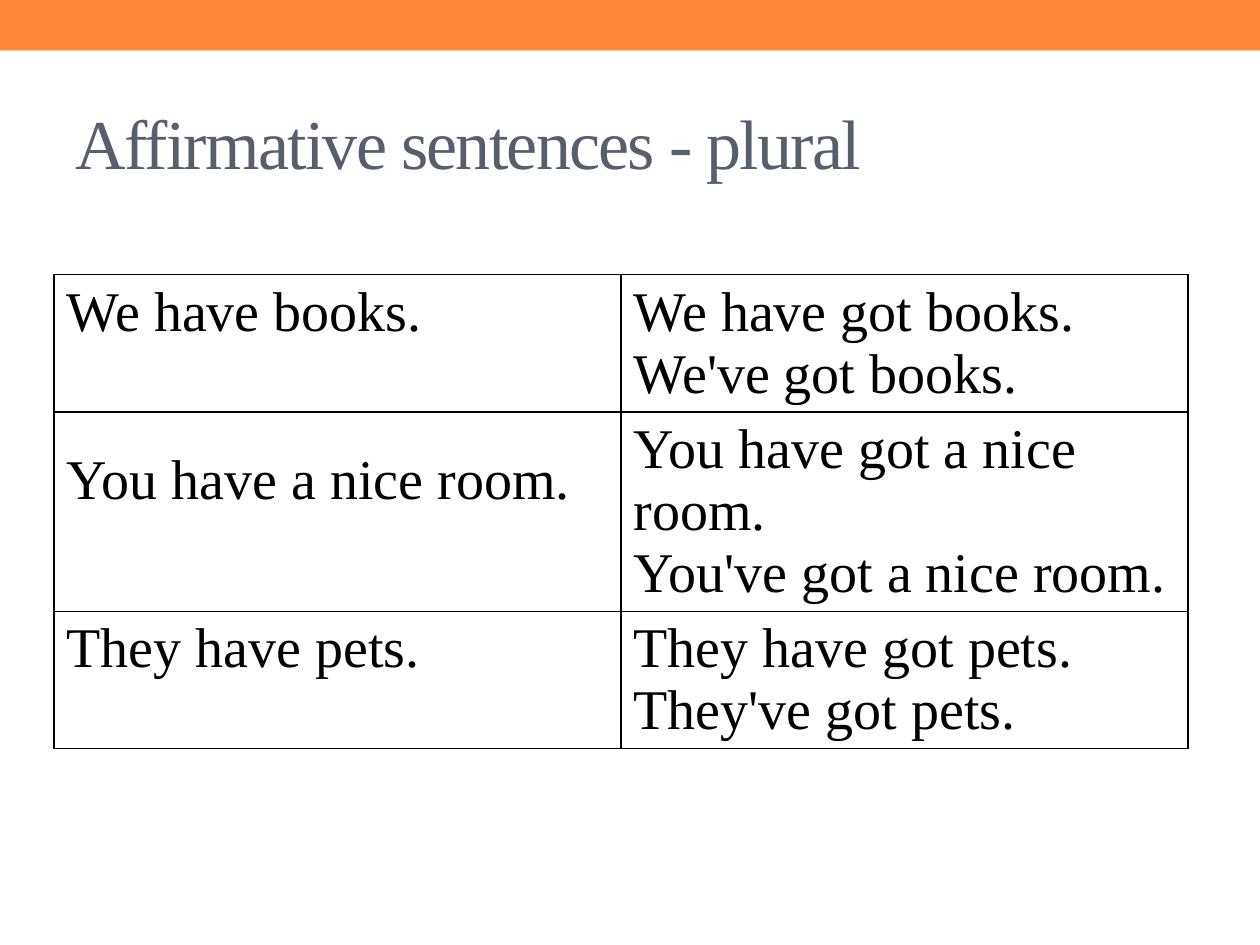
from pptx import Presentation
from pptx.dml.color import RGBColor
from pptx.enum.shapes import MSO_SHAPE as Shape
from pptx.enum.text import MSO_ANCHOR as Anchor, PP_ALIGN as Align
from pptx.oxml import parse_xml
from pptx.oxml.ns import nsdecls
from pptx.util import Inches, Pt

ORANGE = RGBColor(0xFE, 0x86, 0x37)
SLATE = RGBColor(0x57, 0x5F, 0x6D)
BLACK = RGBColor(0x00, 0x00, 0x00)

SENTENCES = [
    ("We have books.", "We have got books.\vWe've got books."),
    ("You have a nice room.", "You have got a nice room.\vYou've got a nice room."),
    ("They have pets.", "They have got pets.\vThey've got pets."),
]
ROW_HEIGHTS = [1.09, 1.58, 1.09]
TEXT_LINE = 0.49
CELL_MARGIN = 0.05


class SlideBuilder:
    font_name = "Times New Roman"

    def __init__(self, page):
        self.page = page

    def style(self, para, size, color):
        para.alignment = Align.LEFT
        para.font.name = self.font_name
        para.font.size = Pt(size)
        para.font.color.rgb = color

    def band(self, left, top, width, height, color):
        band = self.page.shapes.add_shape(
            Shape.RECTANGLE, Inches(left), Inches(top), Inches(width), Inches(height))
        band.shadow.inherit = False
        band.fill.solid()
        band.fill.fore_color.rgb = color
        band.line.fill.background()

    def title(self, text, left, top, width, height):
        title = self.page.shapes.title
        title.left, title.top = Inches(left), Inches(top)
        title.width, title.height = Inches(width), Inches(height)
        title.text_frame.vertical_anchor = Anchor.MIDDLE
        para = title.text_frame.paragraphs[0]
        span = para.add_run()
        span.text = text
        span._r.get_or_add_rPr().set("spc", "-100")
        self.style(para, 40, SLATE)

    def borders(self, cell, color, width):
        properties = cell._tc.get_or_add_tcPr()
        for side in ("lnL", "lnR", "lnT", "lnB"):
            properties.append(parse_xml(
                f'<a:{side} {nsdecls("a")} w="{Pt(width)}"><a:solidFill>'
                f'<a:srgbClr val="{color}"/></a:solidFill></a:{side}>'))

    def table(self, rows, row_heights, left, top, width):
        frame = self.page.shapes.add_table(
            len(rows), len(rows[0]), Inches(left), Inches(top),
            Inches(width), Inches(sum(row_heights)))
        table = frame.table
        table.first_row = table.horz_banding = False
        for row, height in zip(table.rows, row_heights):
            row.height = Inches(height)
        for row_index, texts in enumerate(rows):
            for column_index, text in enumerate(texts):
                cell = table.cell(row_index, column_index)
                cell.text_frame.text = text
                cell.vertical_anchor = Anchor.MIDDLE
                if column_index == 0:
                    cell.margin_bottom = Inches(CELL_MARGIN + TEXT_LINE)
                self.borders(cell, BLACK, 1)
                cell.fill.background()
                self.style(cell.text_frame.paragraphs[0], 32, BLACK)


def main():
    deck = Presentation()
    deck.slide_width, deck.slide_height = Inches(10), Inches(7.5)
    builder = SlideBuilder(deck.slides.add_slide(deck.slide_layouts[5]))
    builder.band(0, 0, 10, 0.4, ORANGE)
    builder.title("Affirmative sentences - plural", 0.5, 0.58, 9, 1.08)
    builder.table(SENTENCES, ROW_HEIGHTS, 0.43, 2.18, 9)
    deck.save("out.pptx")


if __name__ == "__main__":
    main()
